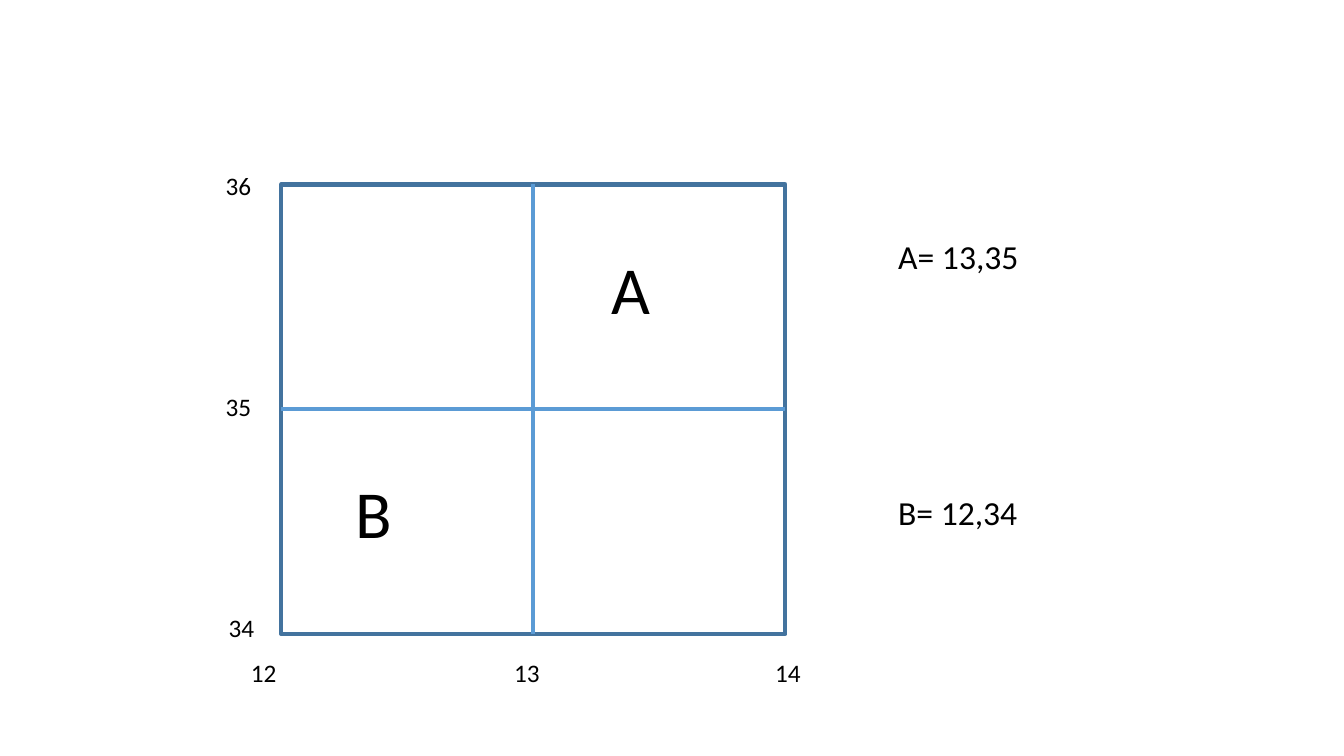
"""Build a map grid slide with two squares named by their coordinates."""
from dataclasses import dataclass

import pptx
import pptx.dml.color
import pptx.enum.shapes
import pptx.enum.text
import pptx.oxml
import pptx.oxml.ns
import pptx.util

Inches = pptx.util.Inches
COLORS = {"frame": "43739E", "grid": "5B9BD5", "text": "000000"}


@dataclass
class Label:
    text: str
    left: float
    top: float
    width: float
    height: float = 0.4
    size: int = 18


AXIS_TOP = 6.47
LABELS = [
    Label("12", 2.39, AXIS_TOP, 0.9),
    Label("13", 5, AXIS_TOP, 0.71),
    Label("14", 7.59, AXIS_TOP, 0.59),
    Label("34", 2.17, 6.03, 0.51),
    Label("35", 2.14, 3.83, 0.67),
    Label("36", 2.14, 1.64, 0.67),
    Label("A", 5.97, 2.4, 1.09, 0.91, 48),
    Label("B", 3.43, 4.63, 1.11, 0.91, 48),
    Label("A= 13,35", 8.81, 2.29, 2.31, 0.5, 24),
    Label("B= 12,34", 8.81, 4.83, 1.81, 0.5, 24),
]


def rgb(name: str) -> pptx.dml.color.RGBColor:
    return pptx.dml.color.RGBColor.from_string(COLORS[name])


def add_frame(s, left: float, top: float, width: float, height: float):
    sp = s.shapes.add_shape(
        pptx.enum.shapes.MSO_SHAPE.RECTANGLE,
        Inches(left), Inches(top), Inches(width), Inches(height),
    )
    sp.shadow.inherit = False
    sp.fill.background()
    sp.line.color.rgb = rgb("frame")
    sp.line.width = pptx.util.Pt(3)
    return sp


def add_divider(s, frame, start: int, end: int) -> None:
    line = s.shapes.add_connector(
        pptx.enum.shapes.MSO_CONNECTOR.STRAIGHT, 0, 0, 0, 0
    )
    line.begin_connect(frame, start)
    line.end_connect(frame, end)
    line.line.color.rgb = rgb("grid")
    line.line.width = pptx.util.Pt(3)
    sp_pr = line._element.spPr
    sp_pr.append(pptx.oxml.parse_xml(
        f"<a:effectLst {pptx.oxml.ns.nsdecls('a')}/>"
    ))


def add_label(s, label: Label) -> None:
    sp = s.shapes.add_textbox(
        Inches(label.left), Inches(label.top),
        Inches(label.width), Inches(label.height),
    )
    tf = sp.text_frame
    tf.word_wrap = True
    tf.auto_size = pptx.enum.text.MSO_AUTO_SIZE.SHAPE_TO_FIT_TEXT
    r = tf.paragraphs[0].add_run()
    r.text = label.text
    r.font.name = "Calibri"
    r.font.size = pptx.util.Pt(label.size)
    r.font.color.rgb = rgb("text")


def main() -> None:
    prs = pptx.Presentation()
    prs.slide_width = Inches(13.33)
    prs.slide_height = Inches(7.5)
    s = prs.slides.add_slide(prs.slide_layouts[6])
    frame = add_frame(s, 2.79, 1.83, 5, 4.46)
    for start, end in ((0, 2), (1, 3)):
        add_divider(s, frame, start, end)
    for label in LABELS:
        add_label(s, label)
    prs.save("out.pptx")


if __name__ == "__main__":
    main()
